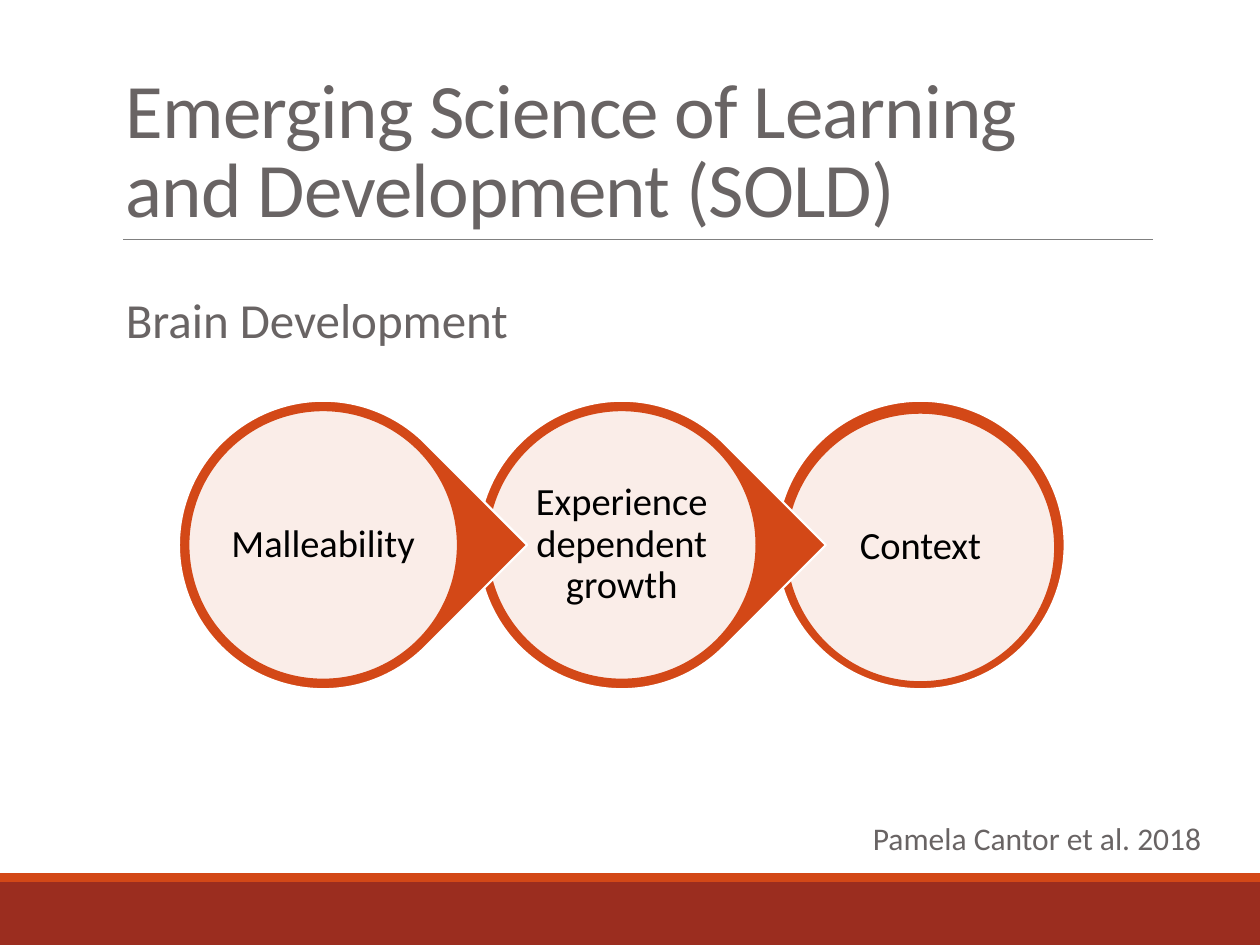
"""Build a slide with three linked circles on the science of learning and development."""
from lxml.etree import SubElement
from pptx import Presentation
from pptx.dml.color import RGBColor
from pptx.enum.shapes import MSO_CONNECTOR as Connector, MSO_SHAPE as Shape
from pptx.enum.text import MSO_ANCHOR as Anchor, PP_ALIGN as Align
from pptx.oxml.ns import qn
from pptx.util import Inches, Pt

COLORS = {"brick": "9B2D1F", "orange": "D34817", "gray": "696464",
          "rule": "808080", "white": "FFFFFF", "black": "000000"}
FONT = "Calibri"
TITLE = "Emerging Science of Learning and Development (SOLD)"
SUBTITLE = "Brain Development"
SOURCE = "Pamela Cantor et al. 2018"
STAGES = ["Malleability", "Experience dependent growth", "Context"]
BANDS = [("brick", 7, 0.5), ("orange", 6.93, 0.07)]

FIRST_LEFT, STAGE_TOP, PITCH = 1.42, 3.18, 2.37
OUTER, INNER, LABEL = 2.29, 2.14, 1.53


def color(name):
    return RGBColor.from_string(COLORS[name])


def add_shape(page, kind, left, top, width, height, fill, line=None):
    shape = page.shapes.add_shape(kind, Inches(left), Inches(top), Inches(width), Inches(height))
    shape.shadow.inherit = False
    shape.fill.solid()
    shape.fill.fore_color.rgb = color(fill)
    if line:
        shape.line.color.rgb = color(line)
        shape.line.width = Pt(1.25)
    else:
        shape.line.fill.background()
    return shape


def add_text(page, text, left, top, width, height, size, ink="gray", wrap=True,
             anchor=Anchor.TOP, align=Align.LEFT, spacing=1.0, inset=None):
    box = page.shapes.add_textbox(Inches(left), Inches(top), Inches(width), Inches(height))
    frame = box.text_frame
    frame.word_wrap = wrap
    frame.vertical_anchor = anchor
    if inset is not None:
        frame.margin_left = frame.margin_right = Inches(inset)
        frame.margin_top = frame.margin_bottom = Inches(inset)
    para = frame.paragraphs[0]
    para.alignment = align
    para.line_spacing = spacing
    span = para.add_run()
    span.text = text
    span.font.name = FONT
    span.font.size = Pt(size)
    span.font.color.rgb = color(ink)
    return span


def add_rule(page):
    rule = page.shapes.add_connector(Connector.STRAIGHT, Inches(0.98), Inches(1.9),
                                     Inches(9.15), Inches(1.9))
    rule.line.color.rgb = color("rule")
    rule.line.width = Pt(0.5)
    SubElement(rule._element.spPr, qn("a:effectLst"))


def add_stage(page, index, label):
    is_last = index == len(STAGES) - 1
    left = FIRST_LEFT + index * PITCH
    drop = 0.02 if is_last else 0
    kind = Shape.OVAL if is_last else Shape.TEAR
    outer = add_shape(page, kind, left, STAGE_TOP, OUTER, OUTER, "orange", "white")
    if not is_last:
        outer.rotation = 45
    margin = (OUTER - INNER) / 2
    disc = add_shape(page, Shape.OVAL, left + margin, STAGE_TOP + margin + drop,
                     INNER, INNER, "white", "orange")
    tint = disc.fill._xPr.find(qn("a:solidFill"))[0]
    SubElement(tint, qn("a:alpha"), val="90000")
    margin = (OUTER - LABEL) / 2
    add_text(page, label, left + margin, STAGE_TOP + margin + drop, LABEL, LABEL, 22,
             ink="black", anchor=Anchor.MIDDLE, align=Align.CENTER, spacing=0.9, inset=0.03)


def main():
    deck = Presentation()
    deck.slide_width, deck.slide_height = Inches(10), Inches(7.5)
    page = deck.slides.add_slide(deck.slide_layouts[6])
    for fill, top, height in BANDS:
        add_shape(page, Shape.RECTANGLE, 0, top, 10, height, fill)
    add_rule(page)
    title = add_text(page, TITLE, 0.9, 0.31, 8.25, 1.59, 44, anchor=Anchor.BOTTOM, spacing=0.85)
    title.font._element.set("spc", "-50")
    for index, label in reversed(list(enumerate(STAGES))):
        add_stage(page, index, label)
    add_text(page, SUBTITLE, 0.9, 2.25, 3.27, 0.57, 28, wrap=False)
    add_text(page, SOURCE, 6.83, 6.45, 2.84, 0.4, 18, wrap=False)
    deck.save("out.pptx")


if __name__ == "__main__":
    main()
